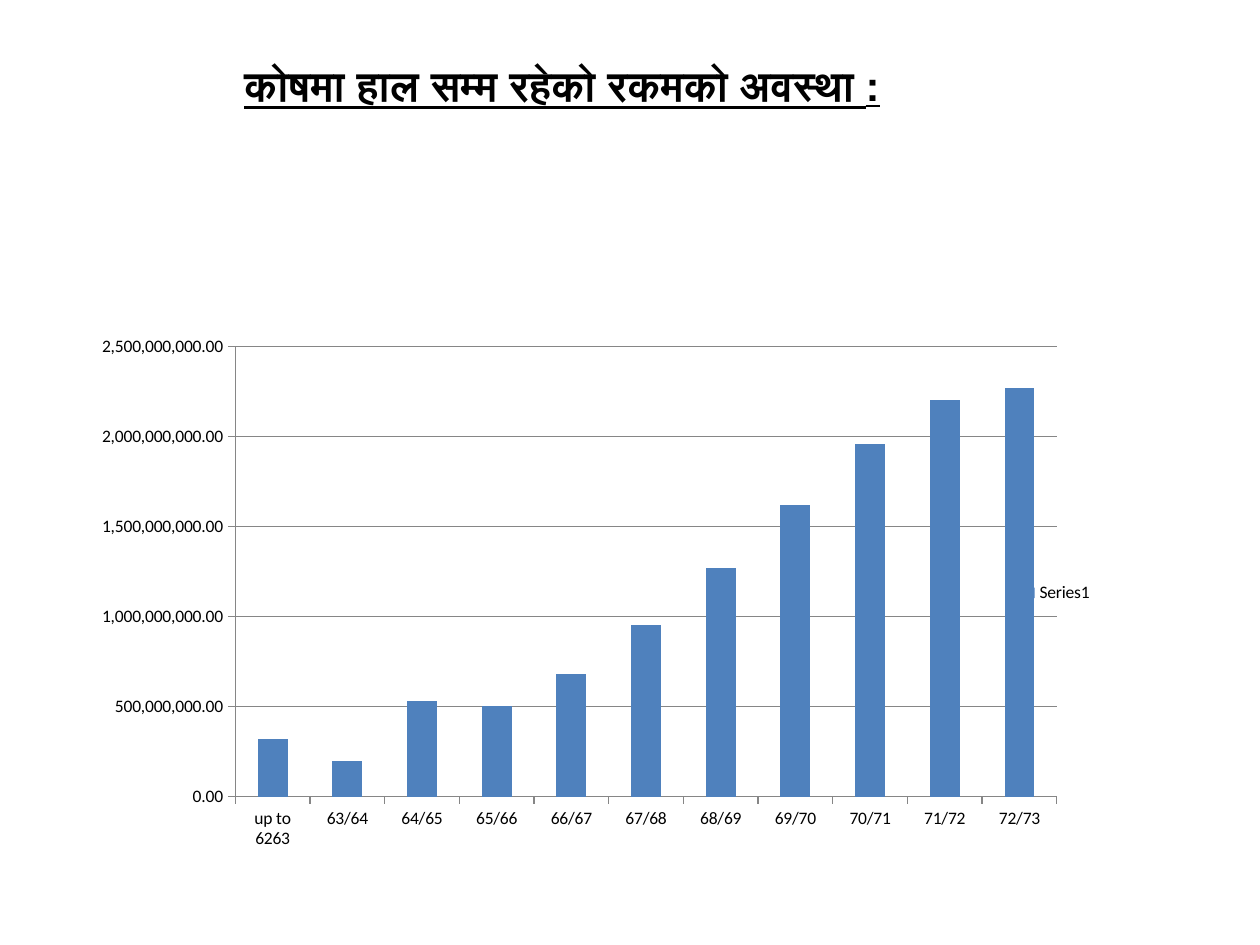
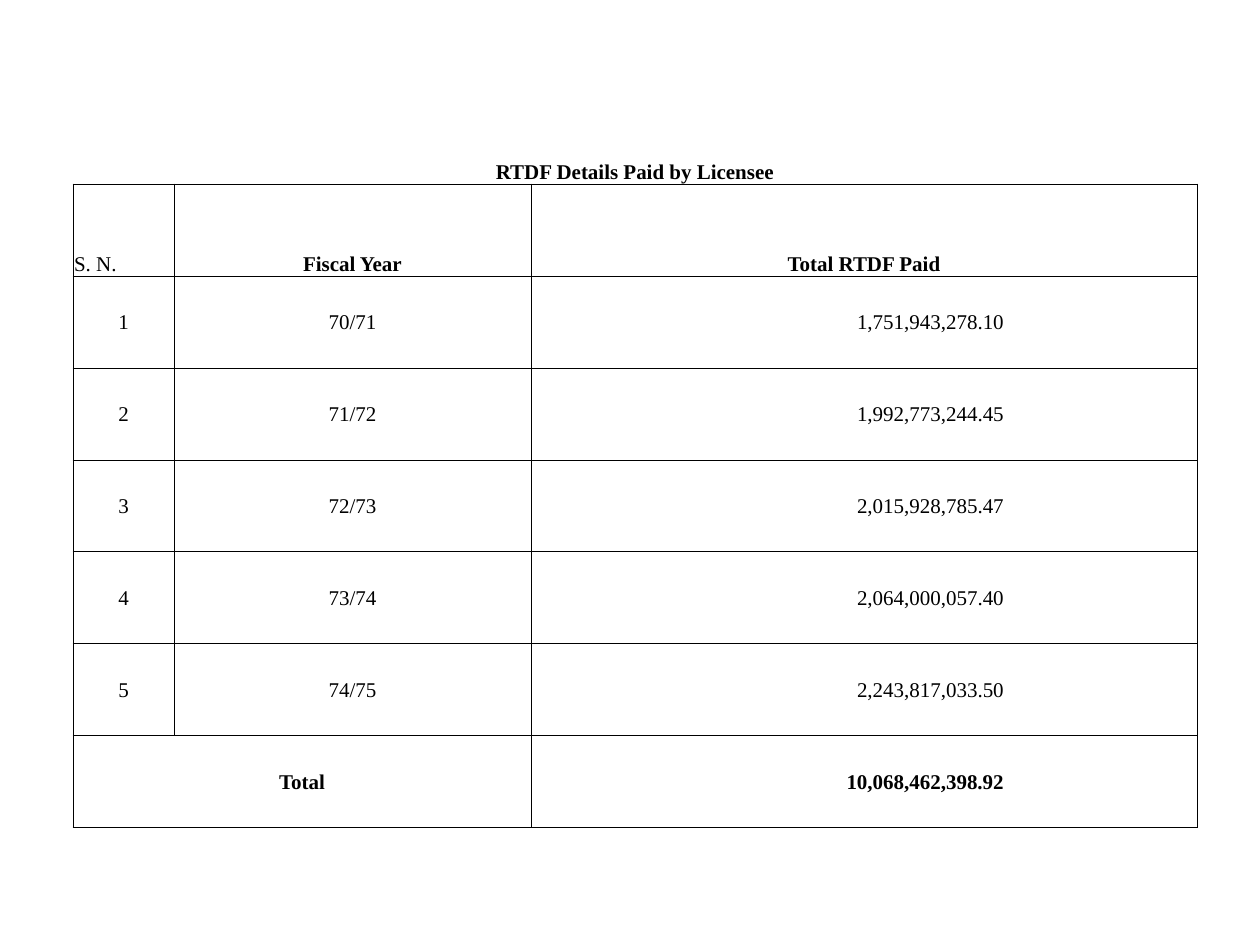
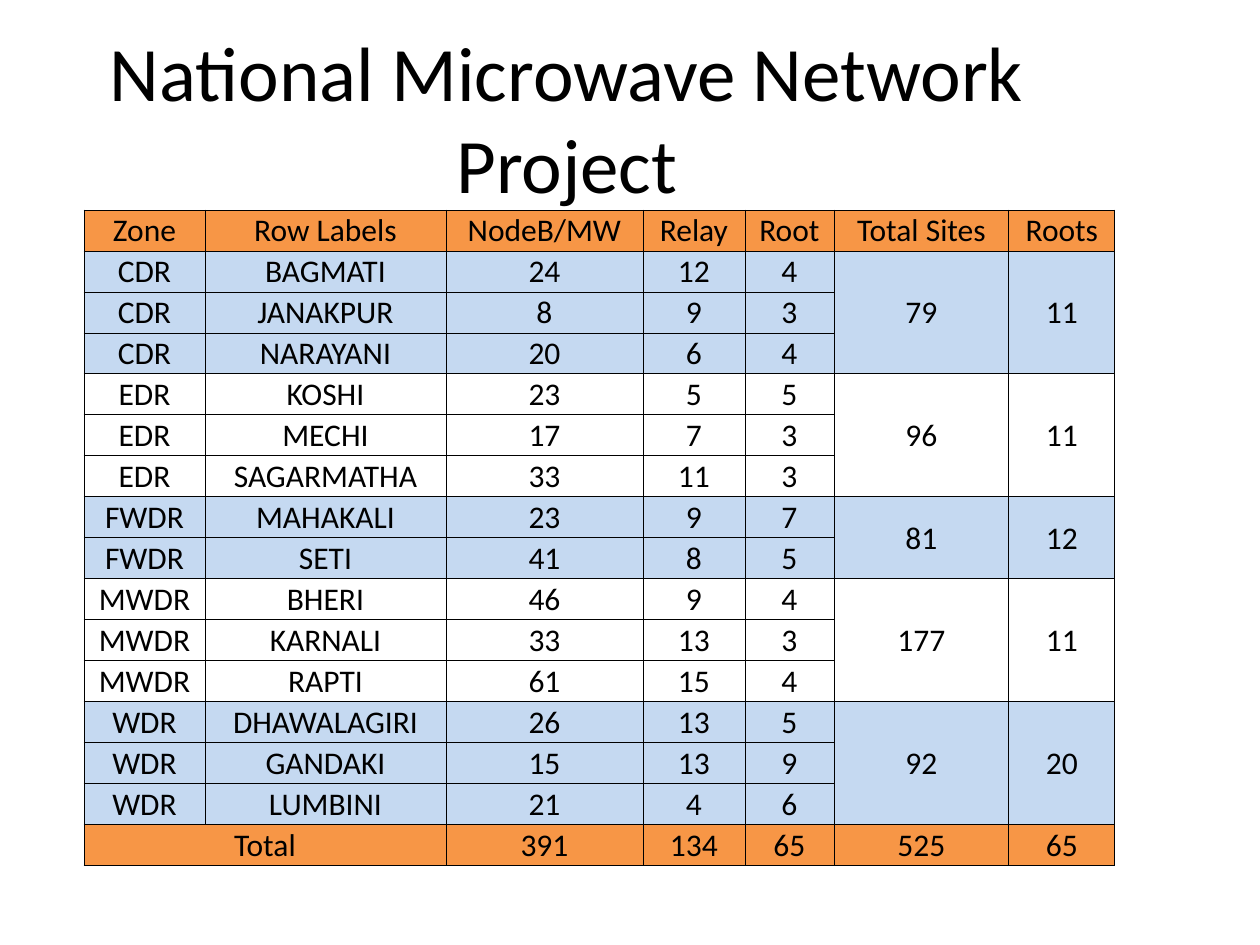
from dataclasses import dataclass

from pptx import Presentation
from pptx.chart.data import CategoryChartData
from pptx.dml.color import RGBColor
from pptx.enum.chart import XL_CHART_TYPE, XL_LEGEND_POSITION, XL_TICK_MARK
from pptx.enum.text import MSO_ANCHOR, MSO_AUTO_SIZE, PP_ALIGN
from pptx.oxml import parse_xml
from pptx.oxml.ns import nsdecls, qn
from pptx.util import Pt


@dataclass(frozen=True)
class Theme:
    ink: str = "000000"
    bar: str = "4F81BD"
    chart_line: str = "868686"
    header: str = "F79646"
    band: str = "C5D9F1"
    sans: str = "Calibri"
    serif: str = "Times New Roman"
    heading: str = "Arial"
    title_size: int = 44
    heading_size: int = 24
    zone_size: int = 18
    payment_size: int = 12
    chart_size: int = 10
    border_width: float = 0.5


THEME = Theme()
PIXELS_PER_INCH = 126
TITLE_ONLY, BLANK = 5, 6

FUND_BALANCE = {
    "up to 6263": 320000000, "63/64": 200000000, "64/65": 530000000,
    "65/66": 500000000, "66/67": 680000000, "67/68": 950000000,
    "68/69": 1270000000, "69/70": 1620000000, "70/71": 1960000000,
    "71/72": 2200000000, "72/73": 2270000000,
}

PAYMENTS = [
    ("70/71", "1,751,943,278.10"),
    ("71/72", "1,992,773,244.45"),
    ("72/73", "2,015,928,785.47"),
    ("73/74", "2,064,000,057.40"),
    ("74/75", "2,243,817,033.50"),
]

ZONE_HEADERS = ["Zone", "Row Labels", "NodeB/MW", "Relay", "Root", "Total Sites", "Roots"]
# Zone, total sites, roots, then (district, NodeB/MW, relay, root)
ZONES = [
    ("CDR", 79, 11, [("BAGMATI", 24, 12, 4), ("JANAKPUR", 8, 9, 3), ("NARAYANI", 20, 6, 4)]),
    ("EDR", 96, 11, [("KOSHI", 23, 5, 5), ("MECHI", 17, 7, 3), ("SAGARMATHA", 33, 11, 3)]),
    ("FWDR", 81, 12, [("MAHAKALI", 23, 9, 7), ("SETI", 41, 8, 5)]),
    ("MWDR", 177, 11, [("BHERI", 46, 9, 4), ("KARNALI", 33, 13, 3), ("RAPTI", 61, 15, 4)]),
    ("WDR", 92, 20, [("DHAWALAGIRI", 26, 13, 5), ("GANDAKI", 15, 13, 9), ("LUMBINI", 21, 4, 6)]),
]
ZONE_TOTALS = ["Total", "", 391, 134, 65, 525, 65]


def px(length):
    return round(length * 914400 / PIXELS_PER_INCH)


def format_font(font, name, size, bold=False):
    font.name = name
    font.size = Pt(size)
    font.bold = bold
    font.color.rgb = RGBColor.from_string(THEME.ink)


def place_title(slide, box, text, name, size, anchor, bold=False, underline=False):
    title = slide.shapes.title
    title.left, title.top, title.width, title.height = map(px, box)
    frame = title.text_frame
    frame.text = text
    frame.word_wrap = True
    frame.auto_size = MSO_AUTO_SIZE.NONE
    frame.vertical_anchor = anchor
    paragraph = frame.paragraphs[0]
    paragraph.alignment = PP_ALIGN.CENTER
    font = paragraph.runs[0].font
    format_font(font, name, size, bold)
    font.underline = underline


# Chart parts
def set_layout(parent, position, mode, x, y, width, height):
    """Fix a chart part at fractions of the chart area."""
    existing = parent.find(qn("c:layout"))
    if existing is not None:
        parent.remove(existing)
    target = f'<c:layoutTarget val="{mode}"/>' if mode else ""
    parent.insert(position, parse_xml(
        f'<c:layout {nsdecls("c")}><c:manualLayout>{target}'
        '<c:xMode val="edge"/><c:yMode val="edge"/>'
        f'<c:x val="{x}"/><c:y val="{y}"/><c:w val="{width}"/><c:h val="{height}"/>'
        '</c:manualLayout></c:layout>'))


def add_balance_chart(slide, box):
    data = CategoryChartData(number_format="#,##0.00")
    data.categories = list(FUND_BALANCE)
    data.add_series("Series1", list(FUND_BALANCE.values()))
    chart = slide.shapes.add_chart(
        XL_CHART_TYPE.COLUMN_STACKED, *map(px, box), data).chart
    chart.has_title = False
    format_font(chart.font, THEME.sans, THEME.chart_size)

    plot = chart.plots[0]
    plot.gap_width, plot.overlap = 150, 100
    plot.vary_by_categories = False
    fill = plot.series[0].format.fill
    fill.solid()
    fill.fore_color.rgb = RGBColor.from_string(THEME.bar)

    values = chart.value_axis
    values.minimum_scale, values.maximum_scale, values.major_unit = 0, 2500000000, 500000000
    values.has_major_gridlines = True
    values.tick_labels.number_format = "#,##0.00"
    values.tick_labels.number_format_is_linked = False
    for axis in (values, chart.category_axis):
        axis.major_tick_mark = XL_TICK_MARK.OUTSIDE
    for part in (values, chart.category_axis, values.major_gridlines):
        part.format.line.color.rgb = RGBColor.from_string(THEME.chart_line)
        part.format.line.width = Pt(0.75)

    # The legend lies over the last column
    chart.has_legend = True
    chart.legend.position = XL_LEGEND_POSITION.RIGHT
    chart.legend.include_in_layout = False
    chart_space = chart._chartSpace
    set_layout(chart_space.find(".//" + qn("c:plotArea")), 0, "inner", 0.14, 0.04, 0.76, 0.84)
    set_layout(chart_space.find(".//" + qn("c:legend")), 1, "", 0.86, 0.47, 0.08, 0.06)


# Table parts
def add_grid(slide, left, top, column_widths, row_heights, merges):
    """Add an unstyled table; a merge is (row, column, last row, last column)."""
    table = slide.shapes.add_table(
        len(row_heights), len(column_widths), px(left), px(top),
        px(sum(column_widths)), px(sum(row_heights))).table
    table.first_row = table.horz_banding = False
    for column, width in zip(table.columns, column_widths):
        column.width = px(width)
    for row, height in zip(table.rows, row_heights):
        row.height = px(height)
    for top_row, first, bottom_row, last in merges:
        table.cell(top_row, first).merge(table.cell(bottom_row, last))
    return table


def draw_borders(cell, sides):
    properties = cell._tc.get_or_add_tcPr()
    for index, side in enumerate("LRTB"):
        paint = (f'<a:solidFill><a:srgbClr val="{THEME.ink}"/></a:solidFill>'
                 if side in sides else "<a:noFill/>")
        properties.insert(index, parse_xml(
            f'<a:ln{side} {nsdecls("a")} w="{Pt(THEME.border_width)}">{paint}</a:ln{side}>'))


def fill_cell(cell, text, name, size, bold=False, color=None, sides="LRTB",
              alignment=PP_ALIGN.CENTER, anchor=MSO_ANCHOR.MIDDLE, margin_right=1):
    cell.margin_left = cell.margin_top = px(1)
    cell.margin_right, cell.margin_bottom = px(margin_right), 0
    cell.vertical_anchor = anchor
    if color:
        cell.fill.solid()
        cell.fill.fore_color.rgb = RGBColor.from_string(color)
    else:
        cell.fill.background()
    draw_borders(cell, sides)
    paragraph = cell.text_frame.paragraphs[0]
    paragraph.alignment = alignment
    if text != "":
        paragraph.text = str(text)
        format_font(paragraph.runs[0].font, name, size, bold)


def add_payment_table(slide, left, top):
    rows = [("RTDF Details Paid by Licensee", "", ""),
            ("S. N.", "Fiscal Year", "Total RTDF Paid")]
    rows += [(number, *payment) for number, payment in enumerate(PAYMENTS, 1)]
    rows.append(("Total", "", "10,068,462,398.92"))
    last = len(rows) - 1
    table = add_grid(slide, left, top, [101, 357, 666], [58] + [92] * last,
                     [(0, 0, 0, 2), (last, 0, last, 1)])
    for row, texts in enumerate(rows):
        heading = row < 2
        for column, text in enumerate(texts):
            amount = column == 2 and not heading
            serial_heading = (row, column) == (1, 0)
            alignment = (PP_ALIGN.RIGHT if amount else
                         PP_ALIGN.LEFT if serial_heading else PP_ALIGN.CENTER)
            fill_cell(table.cell(row, column), text, THEME.serif, THEME.payment_size,
                      bold=(heading or row == last) and not serial_heading,
                      sides="LRTB" if row else "B",
                      alignment=alignment,
                      anchor=MSO_ANCHOR.BOTTOM if heading else MSO_ANCHOR.MIDDLE,
                      margin_right=193 if amount else 1)


def add_zone_table(slide, left, top):
    rows, colors, merges = [ZONE_HEADERS], [THEME.header], []
    for index, (zone, sites, roots, districts) in enumerate(ZONES):
        first = len(rows)
        for order, district in enumerate(districts):
            rows.append([zone, *district, *(("", "") if order else (sites, roots))])
            colors.append(None if index % 2 else THEME.band)
        merges += [(first, column, len(rows) - 1, column) for column in (5, 6)]
    merges.append((len(rows), 0, len(rows), 1))
    rows.append(ZONE_TOTALS)
    colors.append(THEME.header)

    table = add_grid(slide, left, top, [121, 241, 197, 102, 89, 175, 106],
                     [41] * len(rows), merges)
    for row, (texts, color) in enumerate(zip(rows, colors)):
        for column, text in enumerate(texts):
            fill_cell(table.cell(row, column), text, THEME.sans, THEME.zone_size, color=color)


# Slides
def build_balance_slide(slide):
    place_title(slide, (184, 53, 756, 64), "कोषमा हाल सम्म रहेको रकमको अवस्था :",
                THEME.heading, THEME.heading_size, MSO_ANCHOR.TOP, bold=True, underline=True)
    add_balance_chart(slide, (84, 325, 1081, 536))


def build_payment_slide(slide):
    add_payment_table(slide, 73, 126)


def build_network_slide(slide):
    place_title(slide, (0, 38, 1134, 158), "National Microwave Network Project",
                THEME.sans, THEME.title_size, MSO_ANCHOR.MIDDLE)
    add_zone_table(slide, 84, 210)


def main():
    presentation = Presentation()
    presentation.slide_width, presentation.slide_height = px(1260), px(945)
    for layout, build in ((TITLE_ONLY, build_balance_slide),
                          (BLANK, build_payment_slide),
                          (TITLE_ONLY, build_network_slide)):
        build(presentation.slides.add_slide(presentation.slide_layouts[layout]))
    presentation.save("out.pptx")


if __name__ == "__main__":
    main()
